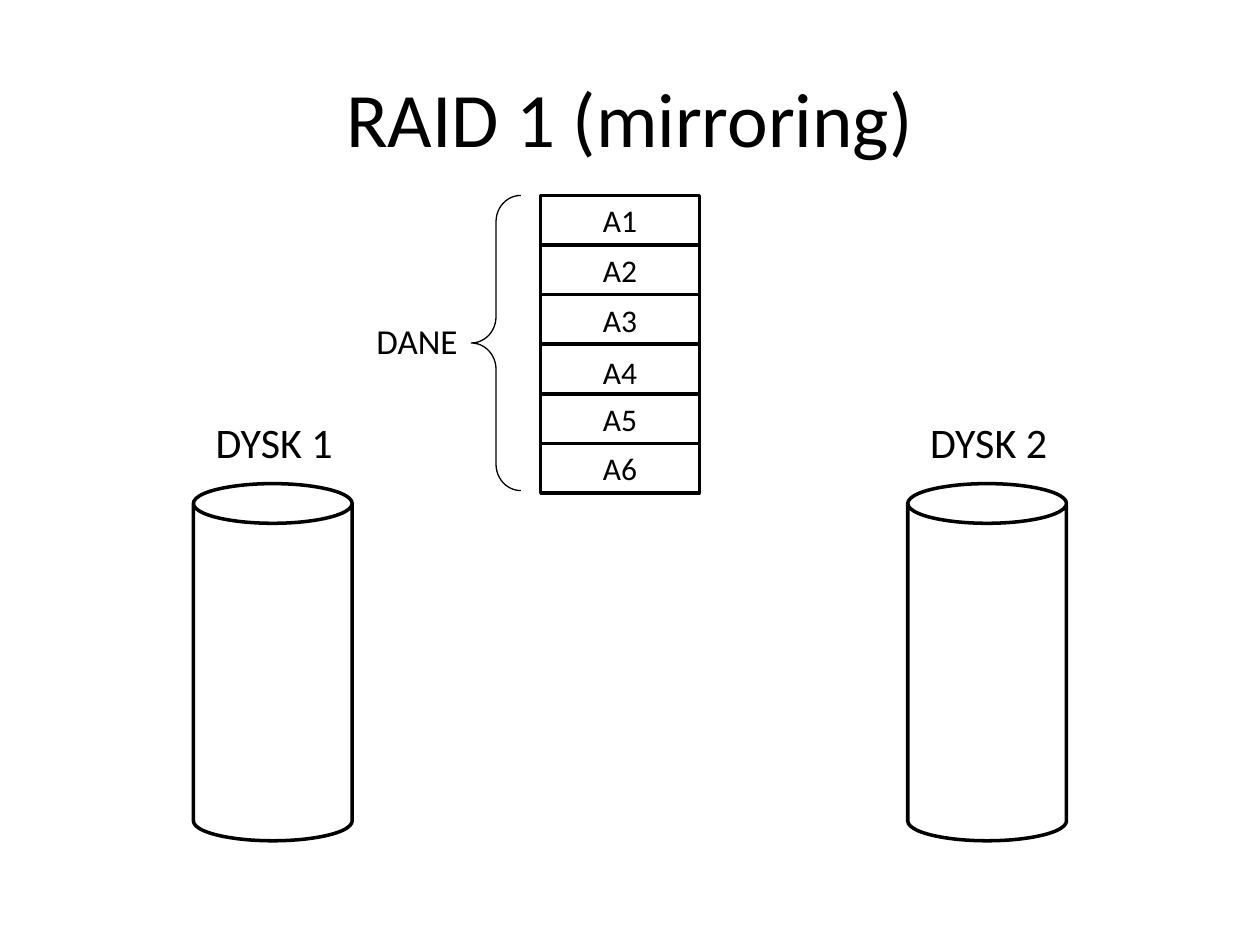
"""Build a slide that shows how RAID 1 mirrors data blocks on two disks."""
from dataclasses import dataclass

from pptx import Presentation
from pptx.dml.color import RGBColor
from pptx.enum.shapes import MSO_SHAPE
from pptx.enum.text import MSO_ANCHOR, PP_ALIGN
from pptx.util import Cm, Pt


@dataclass(frozen=True)
class Theme:
    font: str = "Calibri"
    ink: RGBColor = RGBColor(0, 0, 0)
    paper: RGBColor = RGBColor(255, 255, 255)
    title_size: int = 44
    disk_size: int = 24
    data_size: int = 20
    block_size: int = 18
    outline: float = 2
    thin: float = 0.75


def write(shape, text, theme, size, align=PP_ALIGN.LEFT, anchor=MSO_ANCHOR.TOP, wrap=True):
    frame = shape.text_frame
    frame.word_wrap = wrap
    frame.vertical_anchor = anchor
    paragraph = frame.paragraphs[0]
    paragraph.alignment = align
    run = paragraph.add_run()
    run.text = text
    run.font.name = theme.font
    run.font.size = Pt(size)
    run.font.color.rgb = theme.ink


class RaidSlide:
    def __init__(self, slide, theme):
        self.slide = slide
        self.theme = theme

    def outlined(self, kind, left, top, width, height, weight, filled=True):
        shape = self.slide.shapes.add_shape(kind, Cm(left), Cm(top), Cm(width), Cm(height))
        shape.shadow.inherit = False
        if filled:
            shape.fill.solid()
            shape.fill.fore_color.rgb = self.theme.paper
        else:
            shape.fill.background()
        shape.line.color.rgb = self.theme.ink
        shape.line.width = Pt(weight)
        return shape

    def label(self, text, left, top, width, height, size, **layout):
        box = self.slide.shapes.add_textbox(Cm(left), Cm(top), Cm(width), Cm(height))
        write(box, text, self.theme, size, **layout)

    def title(self, text):
        self.label(text, 1.27, 0.76, 22.86, 3.18, self.theme.title_size,
                   align=PP_ALIGN.CENTER, anchor=MSO_ANCHOR.MIDDLE)

    def disk(self, name, left):
        self.outlined(MSO_SHAPE.CAN, left, 9.75, 3.2, 7.2, self.theme.outline)
        self.label(name, left + 0.2, 8.28, 2.9, 1.27, self.theme.disk_size, wrap=False)

    def block(self, name, top, height):
        block = self.outlined(MSO_SHAPE.RECTANGLE, 10.9, top, 3.2, height, self.theme.outline)
        write(block, name, self.theme, self.theme.block_size,
              align=PP_ALIGN.CENTER, anchor=MSO_ANCHOR.MIDDLE)

    def brace(self, name, left, top, height):
        brace = self.outlined(MSO_SHAPE.LEFT_BRACE, left, top, 1, height, self.theme.thin, filled=False)
        brace.adjustments[0] = 0.53
        self.label(name, left - 2.16, top + height / 2 - 0.6, 2.16, 1.12,
                   self.theme.data_size, wrap=False)


def main():
    deck = Presentation()
    deck.slide_width, deck.slide_height = Cm(25.4), Cm(19.05)
    raid = RaidSlide(deck.slides.add_slide(deck.slide_layouts[6]), Theme())

    raid.title("RAID 1 (mirroring)")
    for number, left in enumerate((3.9, 18.3), start=1):
        raid.disk(f"DYSK {number}", left)

    stack_top, block_height = 3.94, 1
    heights = {"A4": 1.1}
    for row in range(6):
        name = f"A{row + 1}"
        raid.block(name, stack_top + row * block_height, heights.get(name, block_height))
    raid.brace("DANE", 9.5, stack_top, 5.95)

    deck.save("out.pptx")


if __name__ == "__main__":
    main()
